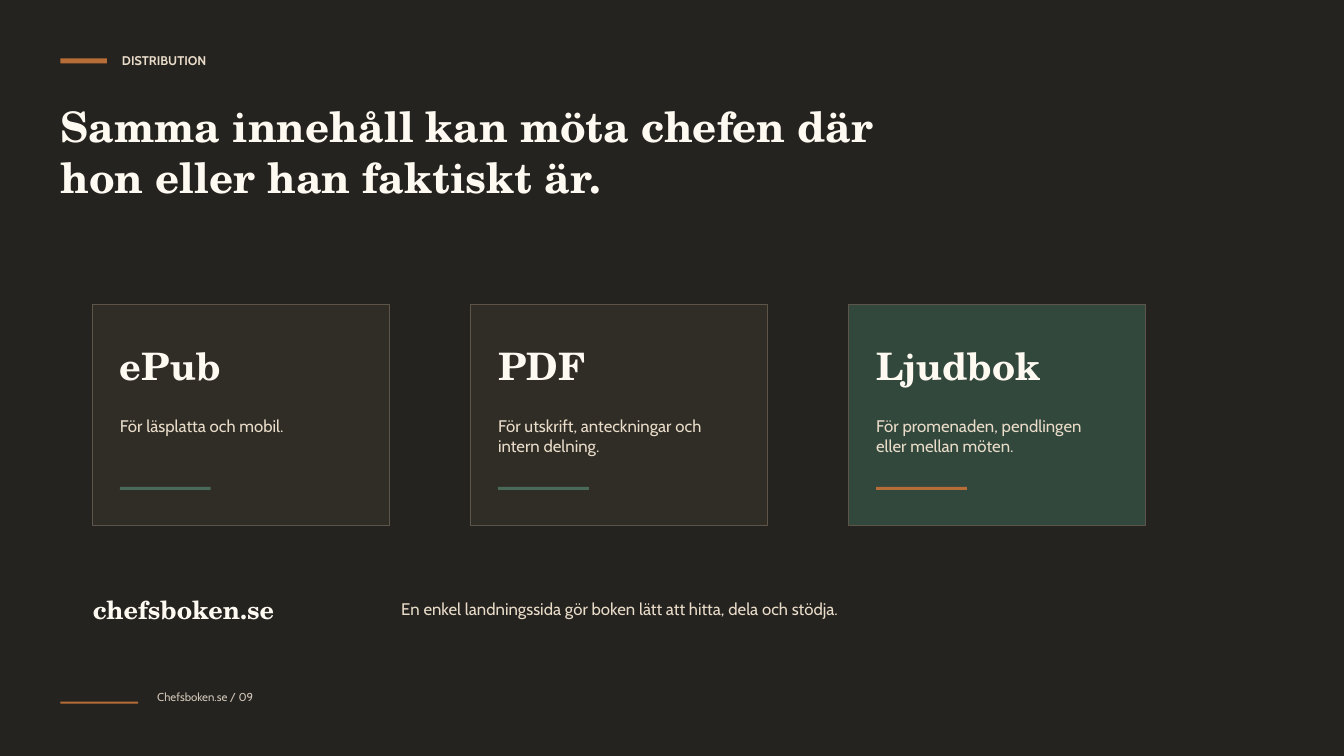
from pptx import Presentation
from pptx import util as u
from pptx.dml.color import RGBColor
from pptx.enum import shapes

WIDTH, HEIGHT = 13.33, 7.5
MARGIN = 0.6
SERIF, SANS = "TeX Gyre Schola", "Cabin"

NIGHT = RGBColor(0x25, 0x23, 0x1F)
COPPER = RGBColor(0xB6, 0x6D, 0x37)
CREAM = RGBColor(0xFF, 0xFA, 0xF1)
SAND = RGBColor(0xE9, 0xDC, 0xC9)
STONE = RGBColor(0xCF, 0xC5, 0xB7)
UMBER = RGBColor(0x30, 0x2D, 0x27)
FOREST = RGBColor(0x33, 0x48, 0x3D)
MOSS = RGBColor(0x49, 0x6A, 0x58)
EDGE = RGBColor(0x5D, 0x55, 0x49)

deck = Presentation()
deck.slide_width, deck.slide_height = u.Inches(WIDTH), u.Inches(HEIGHT)
slide = deck.slides.add_slide(deck.slide_layouts[6])


def add_block(left, top, width, height, fill, edge=None):
    """Draw a flat rectangle, outlined only when an edge colour is given."""
    block = slide.shapes.add_shape(
        shapes.MSO_SHAPE.RECTANGLE, *map(u.Inches, (left, top, width, height)))
    block.shadow.inherit = False
    block.fill.solid()
    block.fill.fore_color.rgb = fill
    if edge is None:
        block.line.fill.background()
    else:
        block.line.color.rgb = edge
        block.line.width = u.Pt(0.75)


def add_text(words, left, top, width, height, *, size=12, font=SANS, color=SAND, bold=False):
    frame = slide.shapes.add_textbox(
        *map(u.Inches, (left, top, width, height))).text_frame
    frame.word_wrap = True
    frame.margin_left = frame.margin_top = frame.margin_right = frame.margin_bottom = 0
    run = frame.paragraphs[0].add_run()
    run.text = words
    run.font.size, run.font.name, run.font.bold = u.Pt(size), font, bold
    run.font.color.rgb = color


add_block(0, 0, WIDTH, HEIGHT, NIGHT)

# Heading
add_block(MARGIN, 0.58, 0.46, 0.05, COPPER)
add_text("DISTRIBUTION", 1.21, 0.52, 6.46, 0.25, size=9, bold=True)
add_text("Samma innehåll kan möta chefen där hon eller han faktiskt är.",
         MARGIN, 1, 8.54, 1, size=30, font=SERIF, color=CREAM, bold=True)

# Format cards
CARDS_LEFT, CARDS_TOP, CARD_STEP, PADDING = 0.92, 3.02, 3.75, 0.27
formats = [
    ("ePub", "För läsplatta och mobil.", UMBER, MOSS),
    ("PDF", "För utskrift, anteckningar och intern delning.", UMBER, MOSS),
    ("Ljudbok", "För promenaden, pendlingen eller mellan möten.", FOREST, COPPER),
]
for column, (title, use, fill, accent) in enumerate(formats):
    card_left = CARDS_LEFT + column * CARD_STEP
    inner_left = card_left + PADDING
    add_block(card_left, CARDS_TOP, 2.94, 2.19, fill, edge=EDGE)
    add_text(title, inner_left, CARDS_TOP + 0.38, 2.29, 0.46,
             size=27, font=SERIF, color=CREAM, bold=True)
    add_text(use, inner_left, CARDS_TOP + 1.1, 2.24, 0.54)
    add_block(inner_left, CARDS_TOP + 1.81, 0.9, 0.03, accent)

# Landing page
add_text("chefsboken.se", CARDS_LEFT, 5.9, 2.92, 0.35,
         size=18, font=SERIF, color=CREAM, bold=True)
add_text("En enkel landningssida gör boken lätt att hitta, dela och stödja.",
         3.98, 5.94, 6.46, 0.29)

# Footer
add_block(MARGIN, 6.96, 0.77, 0.02, COPPER)
add_text("Chefsboken.se / 09", 1.56, 6.85, 3.33, 0.23, size=8.2, color=STONE)

deck.save("out.pptx")
